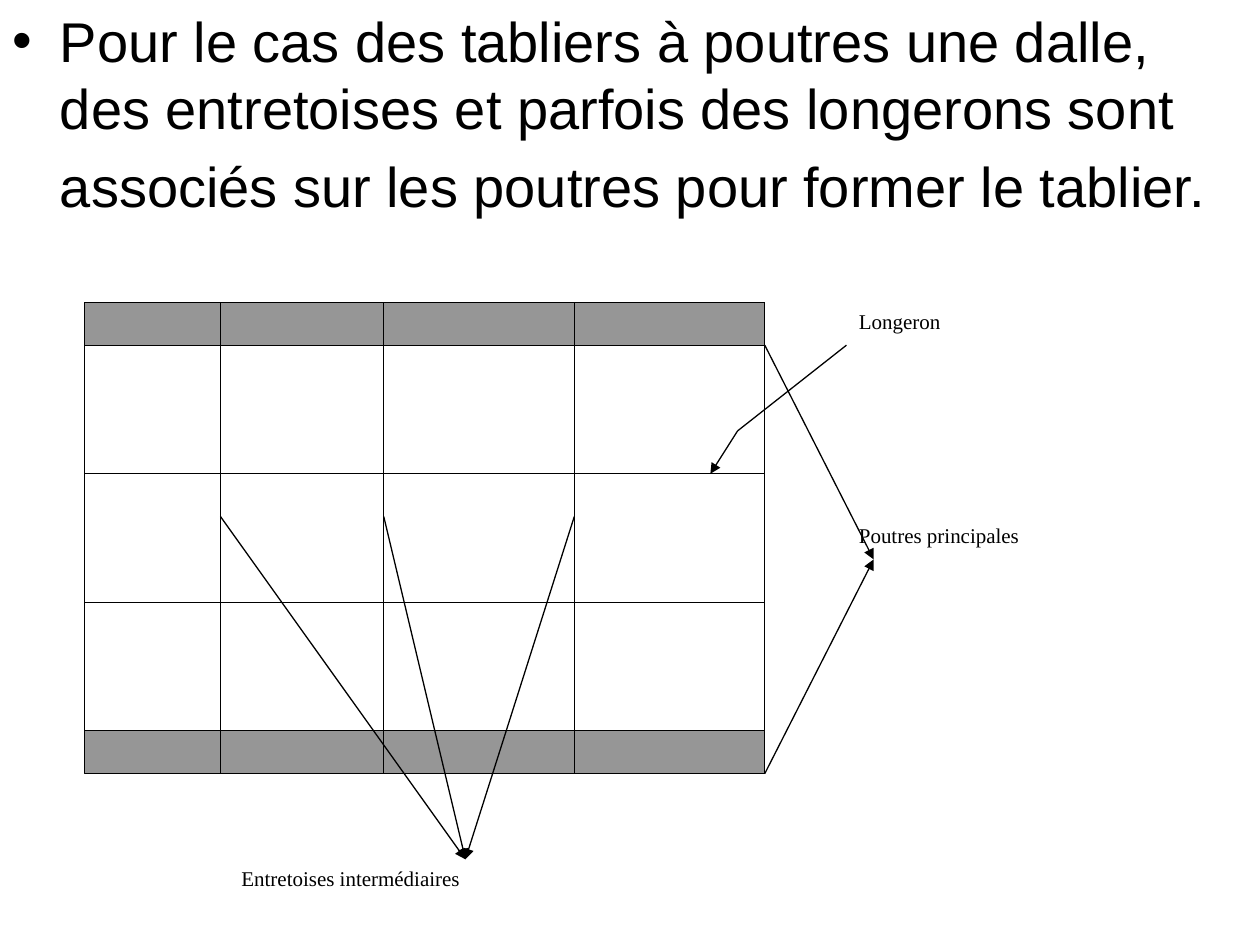
from lxml.etree import SubElement
from pptx import Presentation
from pptx.dml.color import RGBColor
from pptx.enum.shapes import MSO_CONNECTOR, MSO_SHAPE
from pptx.enum.text import MSO_ANCHOR, MSO_AUTO_SIZE, PP_ALIGN
from pptx.oxml.ns import qn
from pptx.util import Inches, Pt

BLACK = RGBColor(0x00, 0x00, 0x00)
WHITE = RGBColor(0xFF, 0xFF, 0xFF)
BEAM_GREY = RGBColor(0x96, 0x96, 0x96)

# Drawing grid: origin and cell size in inches
LEFT, TOP = 0.67, 2.4
COL_W, ROW_H = 0.216, 0.34
DECK_COLS = 25
LOWER_BEAM, DECK_END = 10, 11

BODY_FONT = {"name": "Arial", "size": Pt(32)}
LABEL_FONT = {"name": "Times New Roman", "size": Pt(12)}


def grid_x(col):
    return Inches(LEFT + col * COL_W)


def grid_y(row):
    return Inches(TOP + row * ROW_H)


def format_font(font, values):
    for key, value in values.items():
        setattr(font, key, value)
    font.color.rgb = BLACK


def add_box(shapes, col, row, cols, rows, fill, line):
    box = shapes.add_shape(MSO_SHAPE.RECTANGLE, grid_x(col), grid_y(row),
                           Inches(cols * COL_W), Inches(rows * ROW_H))
    box.shadow.inherit = False
    box.fill.solid()
    box.fill.fore_color.rgb = fill
    box.line.color.rgb = line
    box.line.width = Pt(0.75)
    return box


def add_label(shapes, text, col, row, cols, indent=0):
    label = add_box(shapes, col, row, cols, 2, WHITE, WHITE)
    frame = label.text_frame
    frame.word_wrap = True
    frame.vertical_anchor = MSO_ANCHOR.TOP
    paragraph = frame.paragraphs[0]
    paragraph.alignment = PP_ALIGN.LEFT
    paragraph._p.get_or_add_pPr().set("marL", str(Inches(indent)))
    run = paragraph.add_run()
    run.text = text
    format_font(run.font, LABEL_FONT)
    return label


def add_line(shapes, start, end, arrow=False):
    """Draw a line between two (column, row) points of the grid."""
    line = shapes.add_connector(MSO_CONNECTOR.STRAIGHT,
                                grid_x(start[0]), grid_y(start[1]),
                                grid_x(end[0]), grid_y(end[1]))
    line.line.color.rgb = BLACK
    line.line.width = Pt(0.75)
    if arrow:
        SubElement(line.line._get_or_add_ln(), qn("a:tailEnd"), type="triangle")
    SubElement(line._element.spPr, qn("a:effectLst"))
    return line


def fill_body(body, slide_width, slide_height):
    body.left, body.top, body.width, body.height = 0, 0, slide_width, slide_height
    frame = body.text_frame
    frame.auto_size = MSO_AUTO_SIZE.NONE
    sentence = (
        "Pour le cas des tabliers à poutres une dalle, "
        "des entretoises et parfois des longerons sont",
        "associés sur les poutres pour former le tablier.",
    )
    for index, text in enumerate(sentence):
        paragraph = frame.add_paragraph() if index else frame.paragraphs[0]
        run = paragraph.add_run()
        run.text = text
        format_font(run.font, BODY_FONT)
    # The second line continues the bullet, so it has none of its own
    continuation = paragraph._p.get_or_add_pPr()
    continuation.set("marL", str(Inches(0.375)))
    continuation.set("indent", "0")
    SubElement(continuation, qn("a:buNone"))


def draw_deck(shapes, cross_beams):
    # Main beams
    for row in (0, LOWER_BEAM):
        add_box(shapes, 0, row, DECK_COLS, 1, BEAM_GREY, BLACK)
    # Stringers
    for row in (4, 7):
        add_line(shapes, (0, row), (DECK_COLS, row))
    # Cross beams and deck ends
    add_line(shapes, (0, 0), (0, LOWER_BEAM))
    for col in (*cross_beams, DECK_COLS):
        add_line(shapes, (col, 0), (col, DECK_END))


def draw_callouts(shapes, cross_beams):
    # Stringer: bent arrow
    stringer = add_label(shapes, "Longeron", 28, 0, 7)
    bend = (24, 3)
    add_line(shapes, (28, 1), bend).begin_connect(stringer, 1)
    add_line(shapes, bend, (23, 4), arrow=True)

    # Intermediate cross beams
    cross_label = add_label(shapes, "Entretoises intermédiaires", 3, 13, 22, indent=0.5)
    for col in cross_beams:
        arrow = add_line(shapes, (col, 5), (14, 13), arrow=True)
        arrow.end_connect(cross_label, 0)

    # Main beams
    add_label(shapes, "Poutres principales", 28, 5, 11)
    for row in (1, DECK_END):
        add_line(shapes, (DECK_COLS, row), (29, 6), arrow=True)


def main():
    prs = Presentation()
    prs.slide_width, prs.slide_height = Inches(10), Inches(7.5)
    slide = prs.slides.add_slide(prs.slide_layouts[1])
    title = slide.shapes.title._element
    title.getparent().remove(title)

    fill_body(slide.placeholders[1], prs.slide_width, prs.slide_height)
    cross_beams = (5, 11, 18)
    drawing = slide.shapes.add_group_shape().shapes
    draw_deck(drawing, cross_beams)
    draw_callouts(drawing, cross_beams)
    prs.save("out.pptx")


if __name__ == "__main__":
    main()
